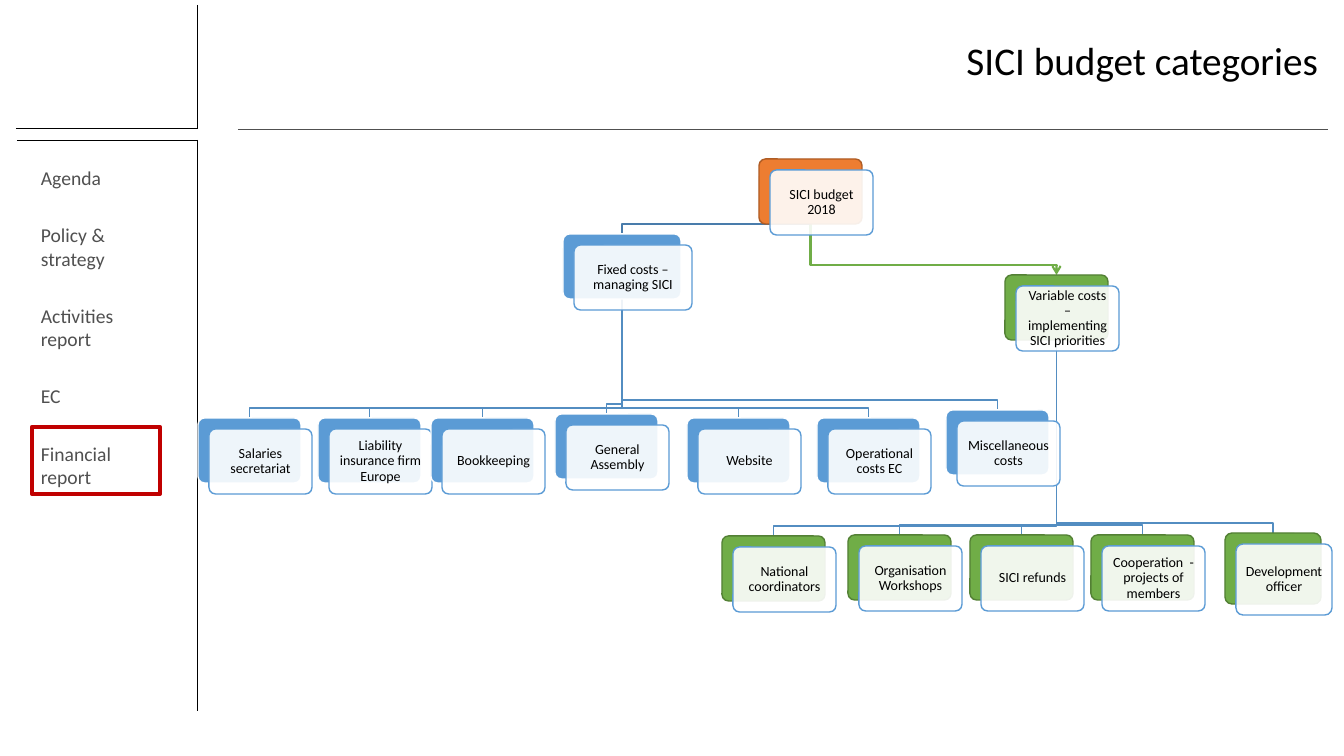
from lxml.etree import SubElement
from pptx import Presentation
from pptx.dml.color import RGBColor
from pptx.enum.shapes import MSO_CONNECTOR, MSO_SHAPE
from pptx.enum.text import MSO_ANCHOR, MSO_AUTO_SIZE, PP_ALIGN
from pptx.oxml.ns import qn
from pptx.util import Pt

TITLE = "SICI budget categories"
MENU = ["Agenda", "Policy & strategy", "Activities report", "EC", "Financial report"]
RULES = [
    (197, 140, 197, 711, "black"),
    (17, 140, 197, 140, "black"),
    (16, 128, 197, 128, "black"),
    (197, 5, 197, 129, "black"),
    (238, 129, 1328, 129, "gray"),
]
COLORS = {
    "black": "000000", "gray": "505050", "white": "FFFFFF", "red": "C00000",
    "orange": "ED7D31", "rust": "AF5C24", "blue": "5B9BD5", "green": "70AD47",
    "moss": "538035", "link": "538DC1", "steel": "497CAB",
}
EDGES = {"orange": "rust", "blue": "white", "green": "moss"}
WIDE, TALL = 103, 65
NODES = {
    "root": ("SICI budget 2018", 759, 159, WIDE, TALL, "orange"),
    "fixed": ("Fixed costs – managing SICI", 563, 234, 118, TALL, "blue"),
    "salary": ("Salaries secretariat", 198, 418, WIDE, TALL, "blue"),
    "cover": ("Liability insurance firm Europe", 318, 418, WIDE, TALL, "blue"),
    "books": ("Bookkeeping", 431, 418, WIDE, TALL, "blue"),
    "meeting": ("General Assembly", 555, 414, WIDE, TALL, "blue"),
    "website": ("Website", 687, 418, WIDE, TALL, "blue"),
    "running": ("Operational costs EC", 817, 418, WIDE, TALL, "blue"),
    "other": ("Miscellaneous costs", 946, 410, WIDE, TALL, "blue"),
    "varied": ("Variable costs – implementing SICI priorities", 1005, 275, WIDE, TALL, "green"),
    "nation": ("National coordinators", 722, 536, WIDE, TALL, "green"),
    "workshop": ("Organisation Workshops", 848, 535, WIDE, TALL, "green"),
    "refund": ("SICI refunds", 970, 535, WIDE, TALL, "green"),
    "project": ("Cooperation  - projects of members", 1091, 535, WIDE, TALL, "green"),
    "growth": ("Development officer", 1225, 533, 96, 71, "green"),
}
TREE = {
    "varied": ["growth", "project", "refund", "workshop", "nation"],
    "fixed": ["other", "running", "website", "meeting", "books", "cover", "salary"],
    "root": ["varied", "fixed"],
}
SHIFT, BEND = 11, 10
SCALE = 914400 / 100.8


def px(n):
    return round(n * SCALE)


def color(name):
    return RGBColor.from_string(COLORS[name])


def style(frame, size, tint, align, leading=None):
    for para in frame.paragraphs:
        para.alignment = align
        if leading:
            para.line_spacing = leading
        for run in para.runs:
            run.font.size = Pt(size)
            run.font.name = "Calibri"
            run.font.color.rgb = color(tint)


def outline(shape, tint, width):
    shape.line.color.rgb = color(tint)
    shape.line.width = Pt(width)


def add_box(shapes, kind, x, y, w, h, fill, edge, width):
    box = shapes.add_shape(kind, *map(px, (x, y, w, h)))
    box.shadow.inherit = False
    if fill:
        box.fill.solid()
        box.fill.fore_color.rgb = color(fill)
    else:
        box.fill.background()
    outline(box, edge, width)
    return box


def add_rule(shapes, x1, y1, x2, y2, tint):
    rule = shapes.add_connector(MSO_CONNECTOR.STRAIGHT, *map(px, (x1, y1, x2, y2)))
    outline(rule, tint, 0.5)
    SubElement(rule._element.spPr, qn("a:effectLst"))


def add_link(shapes, parent, child):
    _, x, y, w, h, _ = NODES[parent]
    _, left, end, wide, _, _ = NODES[child]
    start, stop = x + w / 2, left + wide / 2
    path = shapes.build_freeform(px(start), px(y + h))
    spots = [(start, end - BEND), (stop, end - BEND), (stop, end)]
    path.add_line_segments([(px(a), px(b)) for a, b in spots], close=False)
    link = path.convert_to_shape()
    link.shadow.inherit = False
    link.fill.background()
    if child == "varied":
        outline(link, "green", 1.5)
        SubElement(link.line._get_or_add_ln(), qn("a:tailEnd"), type="arrow")
    else:
        outline(link, "steel" if parent == "root" else "link", 1)


def add_node(shapes, text, x, y, w, h, tint):
    kind = MSO_SHAPE.ROUNDED_RECTANGLE
    back = add_box(shapes, kind, x, y, w, h, tint, EDGES[tint], 1)
    card = add_box(shapes, kind, x + SHIFT, y + SHIFT, w, h, "white", "blue", 1)
    back.adjustments[0] = card.adjustments[0] = 0.1
    shade = card._element.spPr.find(qn("a:solidFill"))[0]
    SubElement(shade, qn("a:alpha"), val="90000")
    frame = card.text_frame
    frame.margin_left = frame.margin_right = px(6)
    frame.margin_top = frame.margin_bottom = px(6)
    frame.vertical_anchor = MSO_ANCHOR.MIDDLE
    frame.word_wrap = True
    frame.text = text
    style(frame, 10, "black", PP_ALIGN.CENTER, 0.9)


def add_title(title):
    title.left, title.top, title.width, title.height = map(px, (217, 1, 1111, 123))
    frame = title.text_frame
    frame.text = TITLE
    frame.vertical_anchor = MSO_ANCHOR.MIDDLE
    style(frame, 28, "black", PP_ALIGN.RIGHT, 0.9)


def add_menu(shapes):
    frame = shapes.add_textbox(*map(px, (31, 161, 135, 393))).text_frame
    frame.word_wrap = True
    frame.auto_size = MSO_AUTO_SIZE.SHAPE_TO_FIT_TEXT
    frame.text = "\n".join(MENU)
    for i, para in enumerate(frame.paragraphs):
        para.space_before = Pt(12 if i else 0)
        para.space_after = Pt(12)
    style(frame, 14, "gray", PP_ALIGN.LEFT)


def main():
    deck = Presentation()
    deck.slide_width, deck.slide_height = px(1344), px(756)
    slide = deck.slides.add_slide(deck.slide_layouts[5])
    shapes = slide.shapes
    add_title(shapes.title)
    for rule in RULES:
        add_rule(shapes, *rule)
    add_menu(shapes)
    add_box(shapes, MSO_SHAPE.RECTANGLE, 32, 427, 128, 67, None, "red", 3)
    for parent, kids in TREE.items():
        for child in kids:
            add_link(shapes, parent, child)
    for node in NODES.values():
        add_node(shapes, *node)
    deck.save("out.pptx")


if __name__ == "__main__":
    main()
